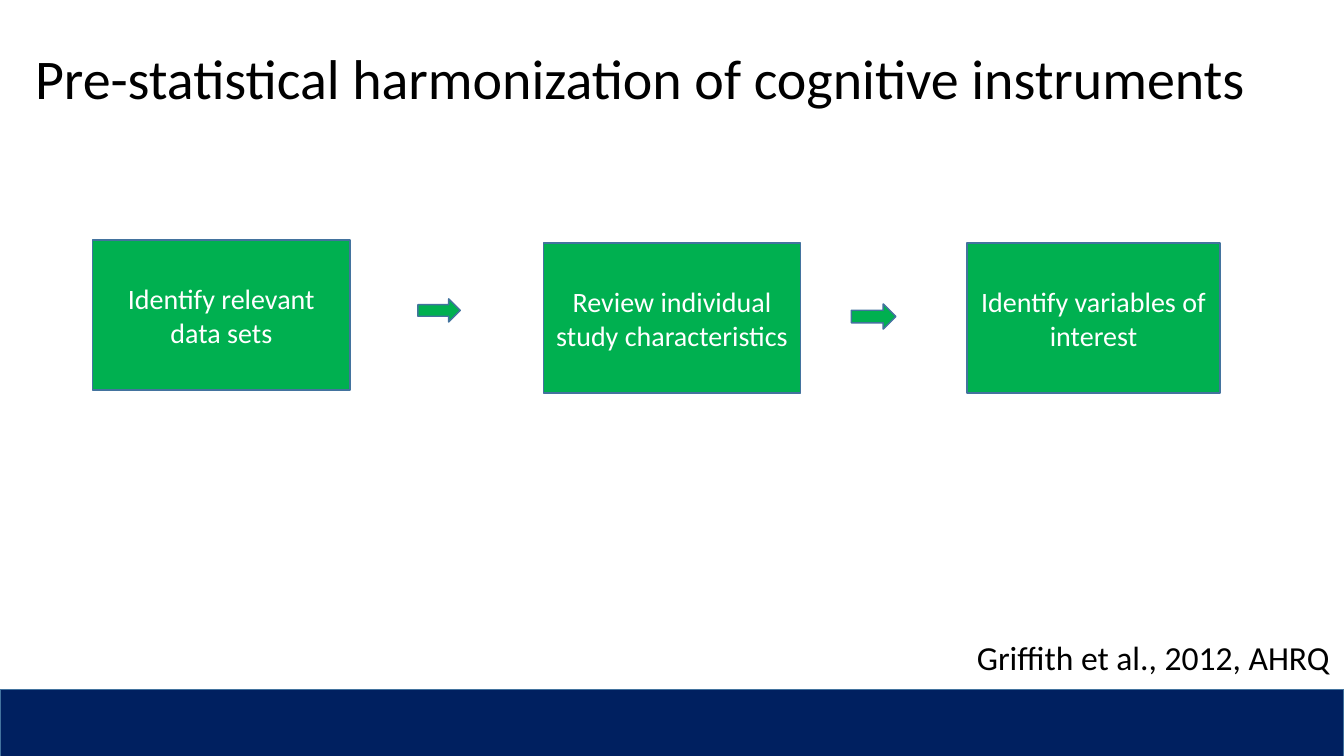
from pptx import Presentation
from pptx.dml.color import RGBColor
from pptx.enum.shapes import MSO_SHAPE
from pptx.enum.text import MSO_ANCHOR, PP_ALIGN
from pptx.util import Inches, Pt

GREEN = RGBColor(0x00, 0xB0, 0x50)
NAVY = RGBColor(0x00, 0x20, 0x60)
OUTLINE = RGBColor(0x43, 0x73, 0x9E)
WHITE = RGBColor(0xFF, 0xFF, 0xFF)
BLACK = RGBColor(0x00, 0x00, 0x00)
FONT = "Calibri"

TITLE = "Pre-statistical harmonization of cognitive instruments"
CITATION = "Griffith et al., 2012, AHRQ"
# text, (left, top, width, height) in inches
STEPS = [
    ("Identify relevant data sets", (0.92, 2.38, 2.55, 1.49)),
    ("Review individual study characteristics", (5.39, 2.41, 2.55, 1.49)),
    ("Identify variables of interest", (9.59, 2.41, 2.51, 1.49)),
]
# Boxes before the quarter turn that points each arrow right
ARROWS = [(4.24, 2.87, 0.23, 0.42), (8.54, 2.92, 0.25, 0.44)]
FOOTER = (0, 6.84, 13.33, 0.68)


def add_filled(page, kind, bounds, color):
    shape = page.shapes.add_shape(kind, *map(Inches, bounds))
    shape.shadow.inherit = False
    shape.fill.solid()
    shape.fill.fore_color.rgb = color
    shape.line.color.rgb = OUTLINE
    shape.line.width = Pt(1)
    return shape


def write(shape, text, size, color, align, anchor):
    frame = shape.text_frame
    frame.word_wrap = True
    frame.vertical_anchor = anchor
    para = frame.paragraphs[0]
    para.alignment = align
    span = para.add_run()
    span.text = text
    span.font.name = FONT
    span.font.size = Pt(size)
    span.font.color.rgb = color
    return para


def add_label(page, text, bounds, size, anchor):
    box = page.shapes.add_textbox(*map(Inches, bounds))
    return write(box, text, size, BLACK, PP_ALIGN.LEFT, anchor)


def main():
    deck = Presentation()
    deck.slide_width, deck.slide_height = Inches(13.33), Inches(7.5)
    page = deck.slides.add_slide(deck.slide_layouts[6])

    title = add_label(page, TITLE, (0.25, 0.08, 12.53, 1.45), 40, MSO_ANCHOR.MIDDLE)
    title.line_spacing = 0.9

    for text, bounds in STEPS:
        step = add_filled(page, MSO_SHAPE.RECTANGLE, bounds, GREEN)
        write(step, text, 20, WHITE, PP_ALIGN.CENTER, MSO_ANCHOR.MIDDLE)

    for bounds in ARROWS:
        arrow = add_filled(page, MSO_SHAPE.DOWN_ARROW, bounds, GREEN)
        arrow.rotation = 270

    add_filled(page, MSO_SHAPE.RECTANGLE, FOOTER, NAVY)
    add_label(page, CITATION, (9.59, 6.27, 4.32, 0.5), 24, MSO_ANCHOR.TOP)
    deck.save("out.pptx")


if __name__ == "__main__":
    main()
